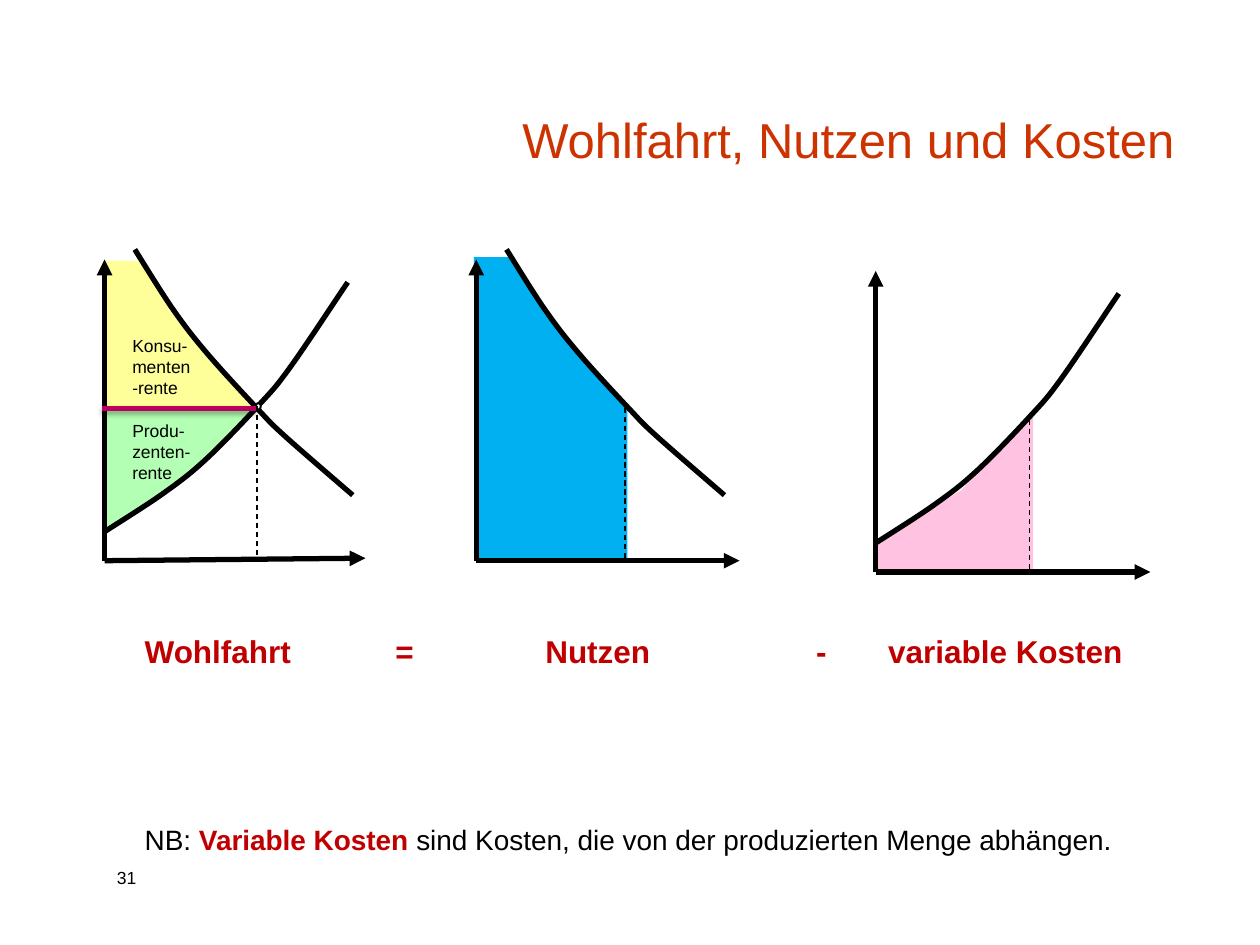
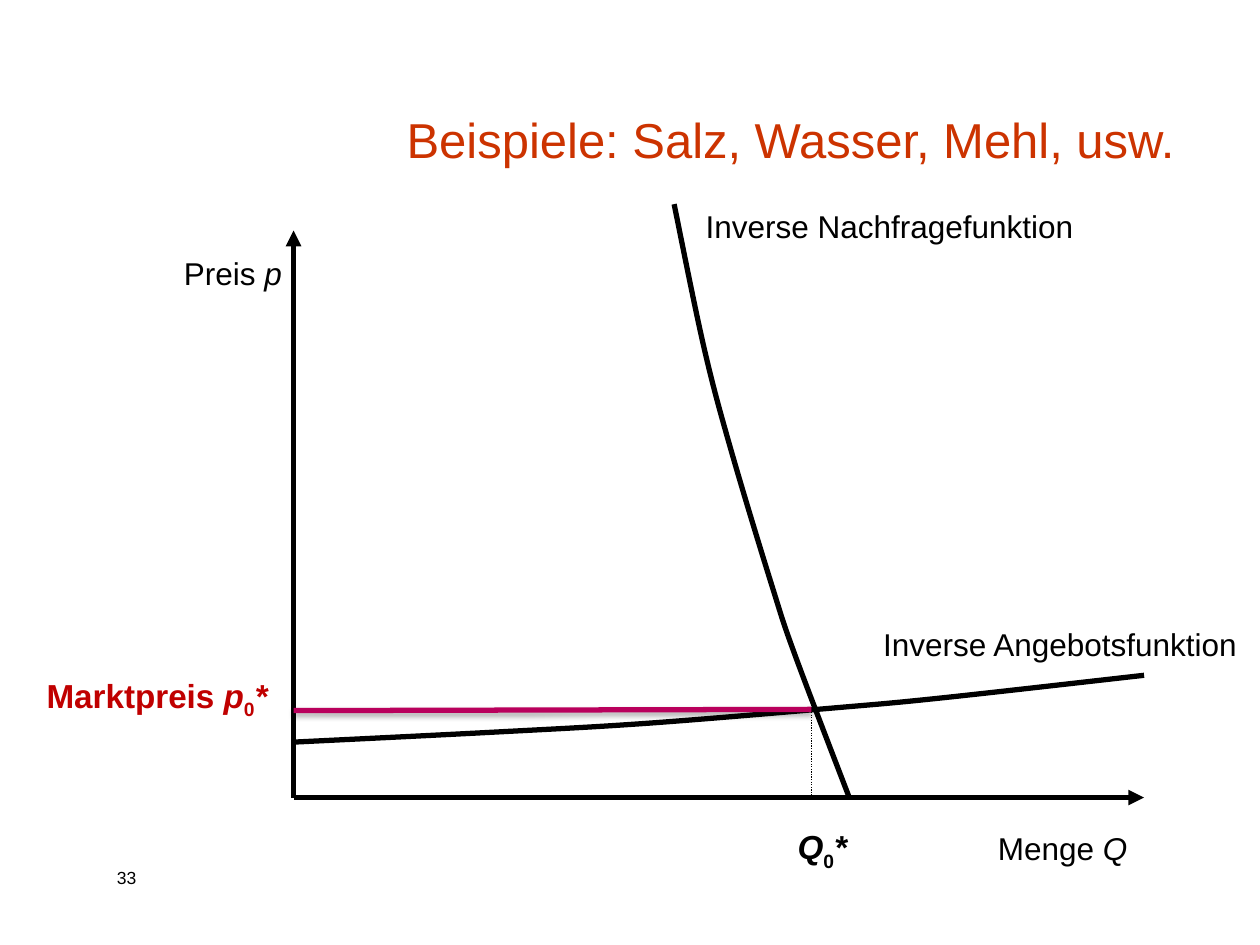
from dataclasses import dataclass

from lxml.etree import SubElement
from pptx import Presentation
from pptx.dml.color import RGBColor as RGB
from pptx.enum.dml import MSO_LINE as Dash
from pptx.enum.shapes import MSO_CONNECTOR as Connector, MSO_SHAPE as Preset
from pptx.enum.text import MSO_ANCHOR as Anchor, MSO_AUTO_SIZE as AutoSize, PP_ALIGN as Align
from pptx.oxml.ns import qn
from pptx.util import Pt

SCALE = 9144  # EMU in one px, 100 px to the inch


@dataclass(frozen=True)
class Theme:
    font: str = "Arial"
    ink: str = "000000"
    paper: str = "FFFFFF"
    title: str = "CC3300"
    accent: str = "C00000"
    price: str = "B9005C"
    consumer: str = "FFFF99"
    producer: str = "B3FFB3"
    benefit: str = "00B0F0"
    cost: str = "FFC2E0"
    title_size: int = 28
    symbol_size: int = 19
    label_size: int = 18
    note_size: int = 16
    small_size: int = 10
    heavy: float = 3
    ring: float = 1.13
    thin: float = 0.75


THEME = Theme()

# Curves and areas, in px from the origin of their diagram
DEMAND = [(24, -247), (54, -200), (81, -165), (121, -121), (143, -99), (197, -52)]
SUPPLY = [(0, -23), (46, -53), (80, -80), (122, -123), (147, -153), (193, -221)]
STEEP_DEMAND = [(302, -471), (326, -356), (348, -273), (380, -167), (398, -113), (441, 0)]
FLAT_SUPPLY = [(1, -44), (162, -52), (282, -59), (428, -71), (514, -79), (675, -97)]
CONSUMER_AREA = [(-1, -121), (121, -121), (72, -175), (30, -238), (-1, -238)]
PRODUCER_AREA = [(-1, -121), (118, -121), (95, -96), (72, -70), (30, -41), (-1, -24)]
BENEFIT_AREA = [(-2, -241), (30, -241), (54, -196), (120, -124), (120, 0), (1, 0)]
COST_AREA = [(125, -124), (125, -1), (1, -1), (1, -23), (68, -65), (102, -102)]


def px(*lengths):
    return [round(length * SCALE) for length in lengths]


# ---- Text ----
def add_runs(paragraph, runs, **shared):
    """Add (text, format) pairs; shared values apply unless a run overrides them."""
    for text, own in runs:
        style = {"name": THEME.font, "color": THEME.ink, **shared, **own}
        color, baseline = style.pop("color"), style.pop("baseline", None)
        run = paragraph.add_run()
        run.text = text
        run.font.color.rgb = RGB.from_string(color)
        for name, value in style.items():
            setattr(run.font, name, Pt(value) if name == "size" else value)
        if baseline:
            run._r.get_or_add_rPr().set("baseline", str(baseline))


def add_text(slide, box, runs, wrap=True, inset=0, **shared):
    frame = slide.shapes.add_textbox(*px(*box)).text_frame
    margins = {"margin_left": 2 * inset, "margin_right": 2 * inset,
               "margin_top": inset, "margin_bottom": inset}
    for name, value in margins.items():
        setattr(frame, name, px(value)[0])
    frame.word_wrap = wrap
    frame.auto_size = AutoSize.SHAPE_TO_FIT_TEXT
    add_runs(frame.paragraphs[0], runs, **shared)
    return frame


def add_tab_stops(paragraph, stops):
    tab_list = SubElement(paragraph._p.get_or_add_pPr(), qn("a:tabLst"))
    for stop in px(*stops):
        SubElement(tab_list, qn("a:tab"), pos=str(stop), algn="l")


# ---- Lines ----
def style_line(line, color, width, dash=None):
    line.color.rgb = RGB.from_string(color)
    line.width = Pt(width)
    if dash:
        line.dash_style = dash


@dataclass
class Diagram:
    """Draws on a slide with coordinates counted from the diagram's origin."""
    slide: object
    left: int
    base: int

    def place(self, point):
        return px(self.left + point[0], self.base + point[1])

    def line(self, start, end, color=THEME.ink, width=THEME.heavy, dash=None,
             arrow=False, shadow=False):
        connector = self.slide.shapes.add_connector(
            Connector.STRAIGHT, *self.place(start), *self.place(end))
        style_line(connector.line, color, width, dash)
        properties = connector.element.spPr
        if arrow:
            SubElement(properties.find(qn("a:ln")), qn("a:tailEnd"), type="triangle")
        effects = SubElement(properties, qn("a:effectLst"))
        if shadow:
            outer = SubElement(effects, qn("a:outerShdw"), blurRad="40000", dist="23000",
                               dir="5400000", rotWithShape="0")
            tint = SubElement(outer, qn("a:srgbClr"), val=THEME.ink)
            SubElement(tint, qn("a:alpha"), val="35000")

    def axes(self, width, height, rise=0):
        self.line((0, 0), (width, -rise), arrow=True)
        self.line((0, 0), (0, -height), arrow=True)

    def price(self, start, end):
        self.line(start, end, color=THEME.price, shadow=True)

    def drop(self, x, top, bottom, dash=Dash.DASH):
        self.line((x, top), (x, bottom), width=THEME.thin, dash=dash)

    def outline(self, points, close):
        first, *rest = [self.place(point) for point in points]
        builder = self.slide.shapes.build_freeform(*first)
        builder.add_line_segments(rest, close=close)
        shape = builder.convert_to_shape()
        shape.shadow.inherit = False
        return shape

    def area(self, points, color):
        shape = self.outline(points, close=True)
        shape.fill.solid()
        shape.fill.fore_color.rgb = RGB.from_string(color)
        shape.line.fill.background()

    def curve(self, points):
        """Smooth curve through all points: each segment becomes a cubic Bézier."""
        shape = self.outline(points, close=False)
        shape.fill.background()
        style_line(shape.line, THEME.ink, THEME.heavy)
        left, top = shape.left, shape.top
        knots = [(x - left, y - top) for x, y in map(self.place, points)]
        knots = [knots[0], *knots, knots[-1]]
        segments = list(shape.element.iter(qn("a:lnTo")))
        for segment, before, start, end, after in zip(
                segments, knots, knots[1:], knots[2:], knots[3:]):
            controls = [[s + (e - b) / 6 for b, s, e in zip(before, start, end)],
                        [e - (a - s) / 6 for s, e, a in zip(start, end, after)], end]
            segment.clear()
            bezier = SubElement(segment.getparent(), qn("a:cubicBezTo"))
            for x, y in controls:
                SubElement(bezier, qn("a:pt"), x=str(round(x)), y=str(round(y)))
            segment.getparent().replace(segment, bezier)

    def ring(self, x, y, width, height):
        shape = self.slide.shapes.add_shape(
            Preset.OVAL, *self.place((x, y)), *px(width, height))
        shape.shadow.inherit = False
        shape.fill.solid()
        shape.fill.fore_color.rgb = RGB.from_string(THEME.paper)
        style_line(shape.line, THEME.ink, THEME.ring)

    def label(self, x, y, width, height, runs, **options):
        add_text(self.slide, (self.left + x, self.base + y, width, height), runs, **options)


# ---- Shared frame: title and page number ----
def add_slide(presentation, title, number):
    slide = presentation.slides.add_slide(presentation.slide_layouts[5])
    placeholder = slide.shapes.title
    box = dict(zip(("left", "top", "width", "height"), px(209, 42, 733, 97)))
    for name, value in box.items():
        setattr(placeholder, name, value)
    frame = placeholder.text_frame
    frame.vertical_anchor = Anchor.BOTTOM
    frame.auto_size = AutoSize.NONE
    frame.paragraphs[0].alignment = Align.RIGHT
    add_runs(frame.paragraphs[0], [(title, {})], size=THEME.title_size, color=THEME.title)
    add_text(slide, (83, 683, 67, 27), [(number, {})], inset=5, size=THEME.small_size)
    return slide


# ---- Welfare slide ----
def draw_welfare(slide, left, base):
    diagram = Diagram(slide, left, base)
    diagram.area(CONSUMER_AREA, THEME.consumer)
    diagram.area(PRODUCER_AREA, THEME.producer)
    for top, text in ((-179, "Konsu-menten-rente"), (-112, "Produ-zenten-rente")):
        diagram.label(22, top, 50, 51, [(text, {})], size=THEME.small_size)
    diagram.curve(DEMAND)
    diagram.axes(207, 239, rise=2)
    diagram.curve(SUPPLY)
    diagram.ring(120, -125, 4, 5)
    diagram.price((120, -121), (-2, -121))
    diagram.drop(121, -123, -2)


def draw_part(slide, left, base, area, color, curve, width, quantity):
    diagram = Diagram(slide, left, base)
    diagram.area(area, color)
    diagram.curve(curve)
    diagram.axes(width, 239)
    diagram.drop(quantity, -121, -1)


def add_equation(slide, box):
    equation = "Wohlfahrt\t=\tNutzen\t-\tvariable Kosten"
    accent = {"color": THEME.accent, "bold": True}
    frame = add_text(slide, box, [(equation, accent)], inset=5, size=THEME.label_size)
    add_tab_stops(frame.paragraphs[0], (199, 318, 533, 590))
    note = frame.add_paragraph()
    note.space_before = Pt(87)
    add_runs(note, [("NB: ", {}), ("Variable Kosten ", accent),
                    ("sind Kosten, die von der produzierten Menge abhängen.", {})],
             size=THEME.note_size)


def build_welfare_slide(presentation):
    slide = add_slide(presentation, "Wohlfahrt, Nutzen und Kosten", "31")
    draw_welfare(slide, 83, 445)
    draw_part(slide, 378, 445, BENEFIT_AREA, THEME.benefit, DEMAND, 209, 118)
    draw_part(slide, 695, 454, COST_AREA, THEME.cost, SUPPLY, 218, 122)
    add_equation(slide, (105, 497, 853, 188))


# ---- Example slide ----
def build_example_slide(presentation):
    slide = add_slide(presentation, "Beispiele: Salz, Wasser, Mehl, usw.", "33")
    diagram = Diagram(slide, 233, 633)
    diagram.curve(STEEP_DEMAND)
    diagram.axes(675, 450)
    diagram.curve(FLAT_SUPPLY)
    diagram.drop(411, -70, 0, Dash.ROUND_DOT)
    diagram.price((411, -70), (0, -69))

    italic = {"italic": True}
    index = [("0", {"baseline": -25000}), ("*", italic)]
    plain = {"size": THEME.label_size}
    symbol = {"size": THEME.symbol_size, "bold": True}
    labels = [
        ((-87, -431, 85, 30), [("Preis ", {}), ("p", italic)], plain),
        ((559, 25, 103, 30), [("Menge ", {}), ("Q", italic)], plain),
        ((468, -137, 283, 30), [("Inverse Angebotsfunktion", {})], plain),
        ((327, -469, 295, 30), [("Inverse Nachfragefunktion", {})], plain),
        ((400, 23, 41, 32), [("Q", italic), *index], symbol),
        ((-196, -97, 179, 32), [("Marktpreis", {}), (" p", italic), *index],
         {**symbol, "color": THEME.accent}),
    ]
    for box, runs, style in labels:
        diagram.label(*box, runs, wrap=False, **style)


def main():
    presentation = Presentation()
    presentation.slide_width, presentation.slide_height = px(1000, 750)
    build_welfare_slide(presentation)
    build_example_slide(presentation)
    presentation.save("out.pptx")


if __name__ == "__main__":
    main()
